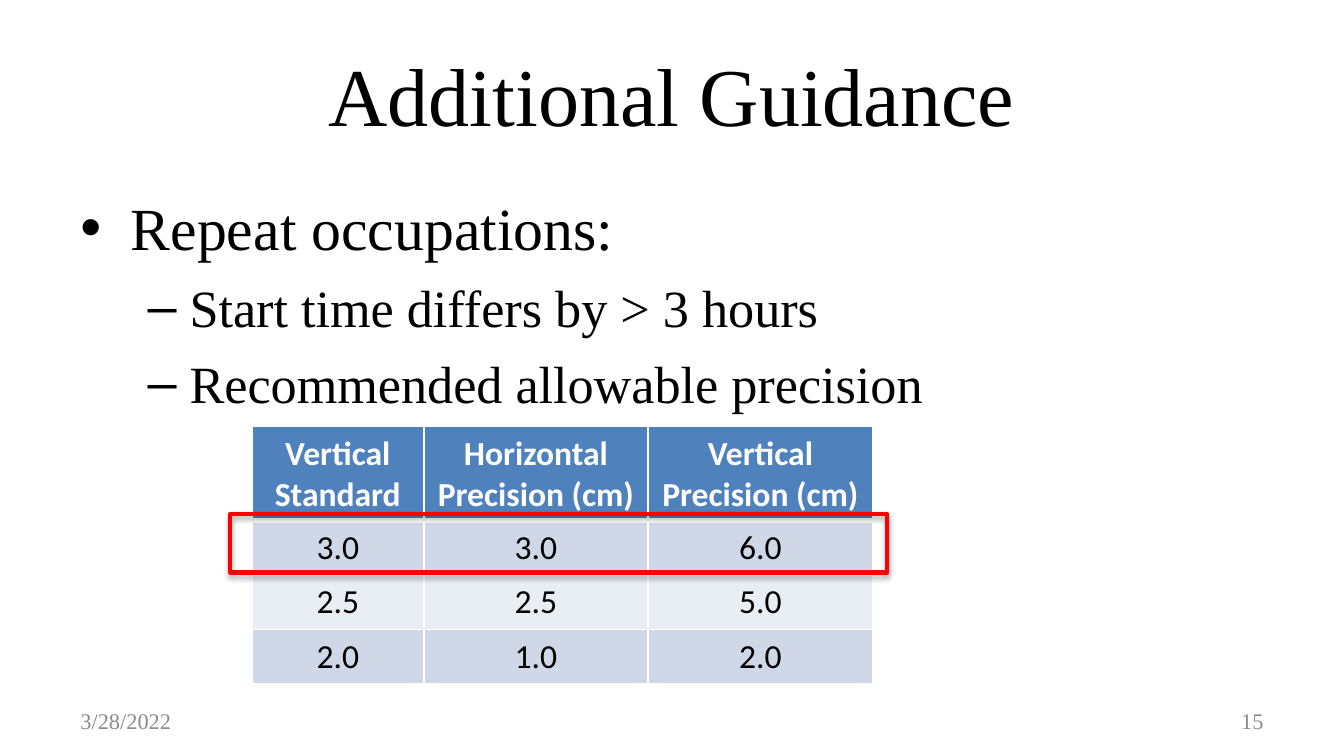
from lxml import etree
from pptx import Presentation
from pptx.dml.color import RGBColor
from pptx.enum import shapes, text
from pptx.oxml import ns
from pptx.util import Pt

COLORS = {
    "text": "000000", "footer": "8C8C8C", "white": "FFFFFF",
    "header": "4F81BD", "band_dark": "D0D8E8", "band_light": "E9EDF4",
    "highlight": "FF0000",
}
SERIF, SANS = "Times New Roman", "Calibri"
ALIGN = text.PP_ALIGN

BULLETS = [
    # wording, level, size, mark, left margin, hanging indent
    ("Repeat occupations:", 0, 32, "•", 27, 27),
    ("Start time differs by > 3 hours", 1, 28, "–", 58.5, 22.5),
    ("Recommended allowable precision", 1, 28, "–", 58.5, 22.5),
]
PRECISION = [
    ("Vertical Standard", "Horizontal Precision (cm)", "Vertical Precision (cm)"),
    ("3.0", "3.0", "6.0"),
    ("2.5", "2.5", "5.0"),
    ("2.0", "1.0", "2.0"),
]


def rgb(name):
    return RGBColor.from_string(COLORS[name])


def add_xml(parent, tag, **attributes):
    return etree.SubElement(parent, ns.qn(tag), attributes)


def set_font(paragraph, face, size, color, bold=False):
    font = paragraph.font
    font.name, font.size, font.bold = face, Pt(size), bold
    font.color.rgb = rgb(color)


def add_box(slide, left, top, width, height, anchor):
    box = slide.shapes.add_textbox(Pt(left), Pt(top), Pt(width), Pt(height))
    frame = box.text_frame
    frame.word_wrap = True
    frame.vertical_anchor = anchor
    return frame


def add_label(slide, wording, left, top, width, height, size, color, align):
    frame = add_box(slide, left, top, width, height, text.MSO_ANCHOR.MIDDLE)
    label = frame.paragraphs[0]
    label.text, label.alignment = wording, align
    set_font(label, SERIF, size, color)


def add_bullets(slide, left, top, width, height):
    frame = add_box(slide, left, top, width, height, text.MSO_ANCHOR.TOP)
    frame.margin_top = Pt(7.5)
    for i, (wording, level, size, mark, margin, hanging) in enumerate(BULLETS):
        item = frame.add_paragraph() if i else frame.paragraphs[0]
        item.text, item.level = wording, level
        item.space_before = Pt(7 if i else 0)
        properties = item._p.get_or_add_pPr()
        properties.set("marL", str(Pt(margin)))
        properties.set("indent", str(-Pt(hanging)))
        add_xml(properties, "a:buFont", typeface="Arial")
        add_xml(properties, "a:buChar", char=mark)
        set_font(item, SERIF, size, "text")


def set_borders(cell, widths):
    properties = cell._tc.get_or_add_tcPr()
    for position, (side, width) in enumerate(widths.items()):
        line = etree.Element(ns.qn("a:ln" + side), w=str(Pt(width)))
        fill = add_xml(line, "a:solidFill")
        add_xml(fill, "a:srgbClr", val=COLORS["white"])
        properties.insert(position, line)


def add_precision_table(slide, left, top, widths, heights):
    table = slide.shapes.add_table(
        len(heights), len(widths), Pt(left), Pt(top),
        Pt(sum(widths)), Pt(sum(heights))).table
    for column, width in zip(table.columns, widths):
        column.width = Pt(width)
    for r, (row, height) in enumerate(zip(table.rows, heights)):
        row.height = Pt(height)
        is_header = r == 0
        fill = "header" if is_header else "band_dark" if r % 2 else "band_light"
        borders = {"L": 1, "R": 1, "T": 3 if r == 1 else 1, "B": 3 if is_header else 1}
        for cell, wording in zip(row.cells, PRECISION[r]):
            cell.text = wording
            cell.fill.solid()
            cell.fill.fore_color.rgb = rgb(fill)
            set_borders(cell, borders)
            entry = cell.text_frame.paragraphs[0]
            entry.alignment = ALIGN.CENTER
            set_font(entry, SANS, 18, "white" if is_header else "text", is_header)


def add_highlight(slide, left, top, width, height):
    frame = slide.shapes.add_shape(
        shapes.MSO_SHAPE.RECTANGLE, Pt(left), Pt(top), Pt(width), Pt(height))
    frame.fill.background()
    frame.line.color.rgb = rgb("highlight")
    frame.line.width = Pt(2.25)
    # Soft shadow straight below the outline
    frame.shadow.inherit = False
    effects = frame._element.spPr.find(ns.qn("a:effectLst"))
    shadow = add_xml(effects, "a:outerShdw", blurRad=str(Pt(3.1)),
                     dist=str(Pt(1.8)), dir="5400000", rotWithShape="0")
    color = add_xml(shadow, "a:srgbClr", val=COLORS["text"])
    add_xml(color, "a:alpha", val="35000")


def main():
    deck = Presentation()
    deck.slide_width, deck.slide_height = Pt(720), Pt(405)
    slide = deck.slides.add_slide(deck.slide_layouts[6])

    # Title and guidance
    add_label(slide, "Additional Guidance", 36, 16.25, 648, 67.5, 44, "text", ALIGN.CENTER)
    add_bullets(slide, 36, 94.5, 648, 267)

    # Footer
    add_label(slide, "3/28/2022", 36, 375.4, 168, 21.6, 12, "footer", ALIGN.LEFT)
    add_label(slide, "15", 516, 375.4, 168, 21.6, 12, "footer", ALIGN.RIGHT)

    # Precision limits, with the first standard outlined
    add_precision_table(slide, 135, 228.5, [92, 120.25, 120.25], [50.4, 29.2, 29.2, 29.2])
    add_highlight(slide, 123.25, 275.25, 352, 31.5)

    deck.save("out.pptx")


if __name__ == "__main__":
    main()
